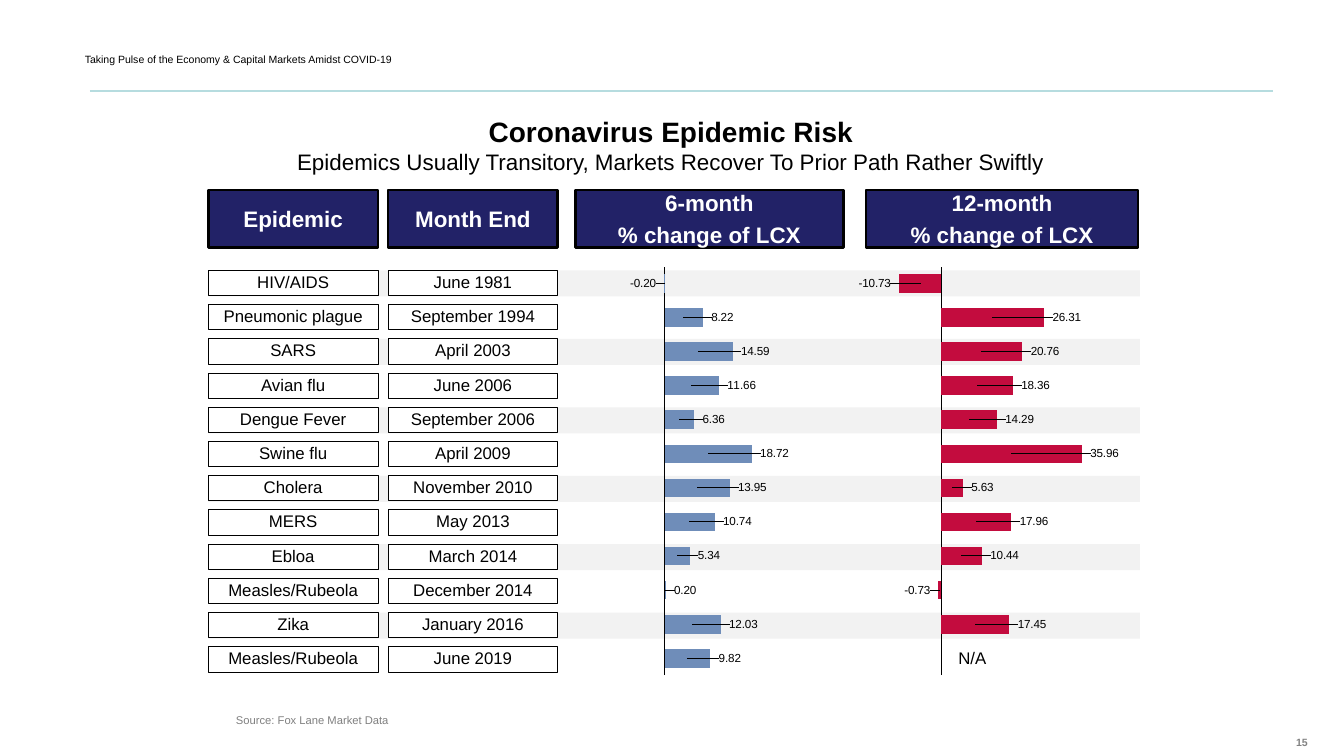
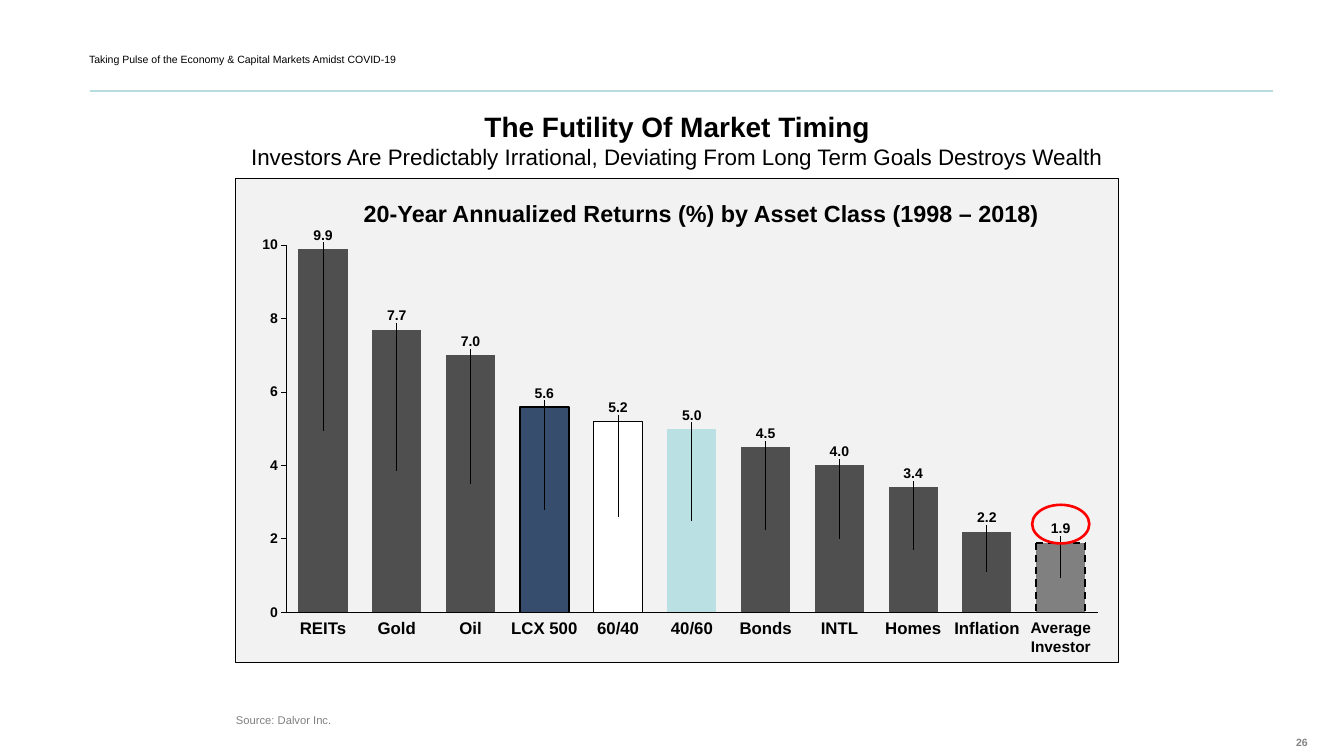
import pptx
import pptx.chart.data
import pptx.dml.color
import pptx.enum.chart
import pptx.enum.dml
import pptx.enum.shapes
import pptx.enum.text
import pptx.oxml
import pptx.oxml.ns
import pptx.util

Inches, Pt = pptx.util.Inches, pptx.util.Pt
RGB = pptx.dml.color.RGBColor
ALIGN, ANCHOR = pptx.enum.text.PP_ALIGN, pptx.enum.text.MSO_ANCHOR
CHART, TICK = pptx.enum.chart.XL_CHART_TYPE, pptx.enum.chart.XL_TICK_MARK
SHAPE = pptx.enum.shapes.MSO_SHAPE
DASH = pptx.enum.dml.MSO_LINE.DASH

BLACK, WHITE, RED = RGB(0, 0, 0), RGB(255, 255, 255), RGB(255, 0, 0)
NAVY, BAND, TEAL = RGB(0x22, 0x22, 0x67), RGB(0xF2, 0xF2, 0xF2), RGB(0xB6, 0xDC, 0xDF)
GREY, PAGE_GREY, CHARCOAL = RGB(0x80, 0x80, 0x80), RGB(0x83, 0x83, 0x83), RGB(0x4F, 0x4F, 0x4F)
BLUE, CRIMSON = RGB(0x6F, 0x8D, 0xB9), RGB(0xC3, 0x0C, 0x3E)
SLATE, AQUA = RGB(0x36, 0x4D, 0x6E), RGB(0xBB, 0xE0, 0xE3)

FONT = "Arial"
W, H = 16, 9
RUNNING_TITLE = "Taking Pulse of the Economy & Capital Markets Amidst COVID-19"

# Epidemic table grid
LEFT, CHIP_W, CHIP_H, COL_STEP = 2.48, 2.02, 0.3, 2.14
ROW_TOP, ROW_LAST = 3.22, 7.7
HEAD_TOP, HEAD_H = 2.26, 0.69

EPIDEMICS = [
    ("HIV/AIDS", "June 1981", -0.2, -10.73),
    ("Pneumonic plague", "September 1994", 8.22, 26.31),
    ("SARS", "April 2003", 14.59, 20.76),
    ("Avian flu", "June 2006", 11.66, 18.36),
    ("Dengue Fever", "September 2006", 6.36, 14.29),
    ("Swine flu", "April 2009", 18.72, 35.96),
    ("Cholera", "November 2010", 13.95, 5.63),
    ("MERS", "May 2013", 10.74, 17.96),
    ("Ebloa", "March 2014", 5.34, 10.44),
    ("Measles/Rubeola", "December 2014", 0.2, -0.73),
    ("Zika", "January 2016", 12.03, 17.45),
    ("Measles/Rubeola", "June 2019", 9.82, None),
]
RETURNS = [("REITs", 9.9), ("Gold", 7.7), ("Oil", 7.0), ("LCX 500", 5.6), ("60/40", 5.2),
           ("40/60", 5.0), ("Bonds", 4.5), ("INTL", 4.0), ("Homes", 3.4), ("Inflation", 2.2),
           ("Average Investor", 1.9)]


def place(x, y, w, h):
    return [Inches(v) for v in (x, y, w, h)]


def set_font(font, size, color=BLACK, bold=False):
    font.name, font.size, font.bold = FONT, Pt(size), bold
    font.color.rgb = color


def write(shape, lines, size=14.4, color=BLACK, bold=False, align=ALIGN.LEFT,
          anchor=ANCHOR.TOP, inset=(0, 0), wrap=True, gap=0, leading=None):
    """Write one paragraph for each line of text."""
    tf = shape.text_frame
    tf.word_wrap, tf.vertical_anchor = wrap, anchor
    tf.margin_left = tf.margin_right = Inches(inset[0])
    tf.margin_top = tf.margin_bottom = Inches(inset[1])
    for i, line in enumerate(lines.split("\n")):
        p = tf.add_paragraph() if i else tf.paragraphs[0]
        p.alignment = align
        if i and gap:
            p.space_before = Pt(gap)
        if leading:
            p.line_spacing = leading
        r = p.add_run()
        r.text = line
        set_font(r.font, size, color, bold)
    return shape


def text(s, box, lines, **fmt):
    return write(s.shapes.add_textbox(*place(*box)), lines, **fmt)


def block(s, box, fill=None, line=None, width=0.75, kind=SHAPE.RECTANGLE):
    sp = s.shapes.add_shape(kind, *place(*box))
    sp.shadow.inherit = False
    paint(sp, fill, line, width)
    return sp


def paint(part, fill, line=None, width=0.75):
    """Fill and outline a shape, or the format of a chart point."""
    if fill is None:
        part.fill.background()
    else:
        part.fill.solid()
        part.fill.fore_color.rgb = fill
    if line is None:
        part.line.fill.background()
    else:
        part.line.color.rgb = line
        part.line.width = Pt(width)


def rule(s, x1, y1, x2, y2, color, dash=None):
    c = s.shapes.add_connector(pptx.enum.shapes.MSO_CONNECTOR.STRAIGHT,
                               *place(x1, y1, x2, y2))
    c.line.color.rgb, c.line.width = color, Pt(1.5)
    if dash:
        c.line.dash_style = dash
    c._element.spPr.append(pptx.oxml.parse_xml(
        "<a:effectLst %s/>" % pptx.oxml.ns.nsdecls("a")))


def chart_xml(body):
    return pptx.oxml.parse_xml(body.replace(">", " %s>" % pptx.oxml.ns.nsdecls("c"), 1))


def manual_layout(mode, **parts):
    inner = "".join('<c:%s val="%.4f"/>' % item for item in parts.items())
    return chart_xml("<c:layout><c:manualLayout>%s%s</c:manualLayout></c:layout>" % (mode, inner))


def bar_chart(s, kind, box, plot_box, vals, color, fmt, gap, limits, shift, size, bold=False):
    """Stacked bars; shift(value) gives each label's offset from its bar, in inches."""
    data = pptx.chart.data.CategoryChartData()
    data.categories = [str(i + 1) for i in range(len(vals))]
    data.add_series("Series 1", vals)
    chart = s.shapes.add_chart(kind, *place(*box), data).chart
    chart.has_legend = chart.has_title = False
    set_font(chart.font, size, bold=bold)
    plot = chart.plots[0]
    plot.gap_width, plot.overlap, plot.vary_by_categories = gap, 100, False

    # Axes and plot area
    cat, val = chart.category_axis, chart.value_axis
    cat.major_tick_mark = cat.minor_tick_mark = val.minor_tick_mark = TICK.NONE
    cat.tick_label_position = pptx.enum.chart.XL_TICK_LABEL_POSITION.NONE
    cat.has_major_gridlines = val.has_major_gridlines = False
    val.minimum_scale, val.maximum_scale = limits
    for axis in (cat, val):
        axis.format.line.color.rgb, axis.format.line.width = BLACK, Pt(0.75)
    area = chart._chartSpace.chart.plotArea
    for old in area.findall(pptx.oxml.ns.qn("c:layout")):
        area.remove(old)
    mode = '<c:layoutTarget val="inner"/><c:xMode val="edge"/><c:yMode val="edge"/>'
    area.insert(0, manual_layout(mode, **dict(zip("xywh", plot_box))))

    # Bars and their labels, with leader lines
    ser = plot.series[0]
    paint(ser.format, color)
    ser.invert_if_negative = False
    for i, v in enumerate(vals):
        if v is not None:
            ser.points[i].data_label.position = pptx.enum.chart.XL_LABEL_POSITION.CENTER
    labels = ser.data_labels._element
    for label in labels.findall(pptx.oxml.ns.qn("c:dLbl")):
        dx, dy = shift(vals[int(label[0].get("val"))])
        label.insert(1, manual_layout("", x=dx / box[2], y=dy / box[3]))
        label.insert(2, chart_xml('<c:numFmt formatCode="%s" sourceLinked="0"></c:numFmt>' % fmt))
    labels.append(chart_xml(
        '<c:extLst><c:ext uri="{CE6537A1-D6FC-4f65-9D91-7224C49458BB}">'
        '<c15:showLeaderLines xmlns:c15="http://schemas.microsoft.com/office/drawing/2012/chart"'
        ' val="1"/></c:ext></c:extLst>'))
    return chart


def base_slide(prs, number, header_at, title_box, title, subtitle, source):
    """Start a slide with the parts that all slides share."""
    s = prs.slides.add_slide(prs.slide_layouts[6])
    rule(s, 1.07, 0.12 * H, 15.15, 0.12 * H, TEAL)
    text(s, (15.43, 8.65, 0.39, 0.3), str(number), size=9, color=PAGE_GREY, bold=True,
         leading=Pt(19.2))
    text(s, (*header_at, 4.09, 0.51), RUNNING_TITLE, size=9, inset=(0, 0.1))
    p = text(s, title_box, title, size=24, bold=True,
             align=ALIGN.CENTER).text_frame.paragraphs[0]
    p.add_line_break()
    r = p.add_run()
    r.text = subtitle
    set_font(r.font, 19.2)
    text(s, (2.81, 8.42, 10.33, 0.3), source, size=9.6, color=GREY, anchor=ANCHOR.MIDDLE)
    return s


def change_chart(s, box, plot_box, vals, color):
    """Horizontal bars with each label just past the end of its bar."""
    known = [v for v in vals if v is not None]
    low, high = min(known), max(known)
    unit = plot_box[2] * box[2] / (high - low)

    def shift(v):
        label_w = 0.08 * len("%.2f" % abs(v)) - 0.04
        reach = abs(v) * unit / 2 + 0.09 + label_w / 2
        return (reach if v > 0 else -reach - 0.02), 0

    chart = bar_chart(s, CHART.BAR_STACKED, box, plot_box, vals, color, "0.00", 80,
                      (low, high), shift, 10)
    chart.category_axis.reverse_order = True
    chart.value_axis.visible = False


def epidemic_slide(prs):
    s = base_slide(prs, 15, (1.01, 0.55), (3.28, 1.36, 9.41, 0.76),
                   "Coronavirus Epidemic Risk",
                   "Epidemics Usually Transitory, Markets Recover To Prior Path Rather Swiftly",
                   "Source: Fox Lane Market Data")
    pitch = (ROW_LAST - ROW_TOP) / (len(EPIDEMICS) - 1)

    # Column heads
    heads = [(LEFT, CHIP_W, "Epidemic"), (LEFT + COL_STEP, CHIP_W, "Month End"),
             (6.85, 3.19, "6-month\n% change of LCX"), (10.31, 3.24, "12-month\n% change of LCX")]
    for x, w, label in heads:
        write(block(s, (x, HEAD_TOP, w, HEAD_H), NAVY, BLACK, 2.25), label, size=19.2,
              color=WHITE, bold=True, align=ALIGN.CENTER, anchor=ANCHOR.MIDDLE,
              inset=(0.06, 0.12), wrap=False, gap=4.4)

    # Rows, every other one on a band
    for i, row in enumerate(EPIDEMICS):
        y = ROW_TOP + i * pitch
        if i % 2 == 0:
            block(s, (LEFT, y, 11.09, 0.31), BAND)
        for col, label in enumerate(row[:2]):
            write(block(s, (LEFT + col * COL_STEP, y, CHIP_W, CHIP_H), WHITE, BLACK), label,
                  align=ALIGN.CENTER, anchor=ANCHOR.MIDDLE, inset=(0.12, 0.12), leading=0.9)

    # Charts
    six, twelve = ([row[k] for row in EPIDEMICS] for k in (2, 3))
    change_chart(s, (6.72, 3.07, 3.03, 5.08), (0.391, 0.021, 0.345, 0.957), six, BLUE)
    change_chart(s, (9.9, 3.07, 3.51, 5.08), (0.229, 0.021, 0.62, 0.957), twelve, CRIMSON)
    text(s, (11.31, 7.66, 0.54, 0.34), "N/A", inset=(0.1, 0.05), wrap=False)


def returns_slide(prs):
    s = base_slide(prs, 26, (1.06, 0.56), (2.7, 1.3, 10.72, 0.76),
                   "The Futility Of Market Timing",
                   "Investors Are Predictably Irrational, Deviating From Long Term Goals "
                   "Destroys Wealth", "Source: Dalvor Inc.")
    block(s, (2.8, 2.12, 10.51, 5.77), BAND, BLACK)

    # Chart
    box, plot_box, top = (2.86, 2.66, 10.31, 4.78), (0.053, 0.054, 0.937, 0.915), 10
    unit = plot_box[3] * box[3] / top
    vals = [v for _, v in RETURNS]
    chart = bar_chart(s, CHART.COLUMN_STACKED, box, plot_box, vals, CHARCOAL, "0.0", 50,
                      (0, top), lambda v: (0, -v * unit / 2 - 0.16), 12, bold=True)
    axis = chart.value_axis
    axis.major_unit, axis.major_tick_mark = 2, TICK.OUTSIDE
    axis.tick_labels.number_format, axis.tick_labels.number_format_is_linked = "#,##0", False
    points = chart.plots[0].series[0].points
    for i, fill, line, width in [(3, SLATE, BLACK, 1.5), (4, WHITE, BLACK, 0.75),
                                 (5, AQUA, None, 0), (10, GREY, None, 0)]:
        paint(points[i].format, fill, line, width)

    # Names under the columns
    step = plot_box[2] * box[2] / len(vals)
    first = box[0] + plot_box[0] * box[2] + step / 2
    for i, (name, _) in enumerate(RETURNS):
        last = i == len(RETURNS) - 1
        w = 0.74 if last else step
        text(s, (first + i * step - w / 2, 7.36, w, 0.44 if last else 0.24), name,
             size=13.2 if last else 14.4, bold=True, align=ALIGN.CENTER, wrap=last)

    # Dashed outline and ring on the last column
    mid, half = first + (len(vals) - 1) * step, step / 3
    foot = box[1] + (plot_box[1] + plot_box[3]) * box[3]
    head = foot - vals[-1] * unit
    rule(s, mid - half, head, mid + half, head, BLACK, DASH)
    for x in (mid - half, mid + half):
        rule(s, x, head, x, foot, BLACK, DASH)
    text(s, (4.33, 2.31, 8.81, 0.5), "20-Year Annualized Returns (%) by Asset Class (1998 – 2018)",
         size=20, bold=True, anchor=ANCHOR.MIDDLE, leading=0.9)
    block(s, (mid - 0.34, 6.01, 0.68, 0.46), None, RED, 2.25, SHAPE.OVAL)


def main():
    prs = pptx.Presentation()
    prs.slide_width, prs.slide_height = Inches(W), Inches(H)
    epidemic_slide(prs)
    returns_slide(prs)
    prs.save("out.pptx")


if __name__ == "__main__":
    main()
